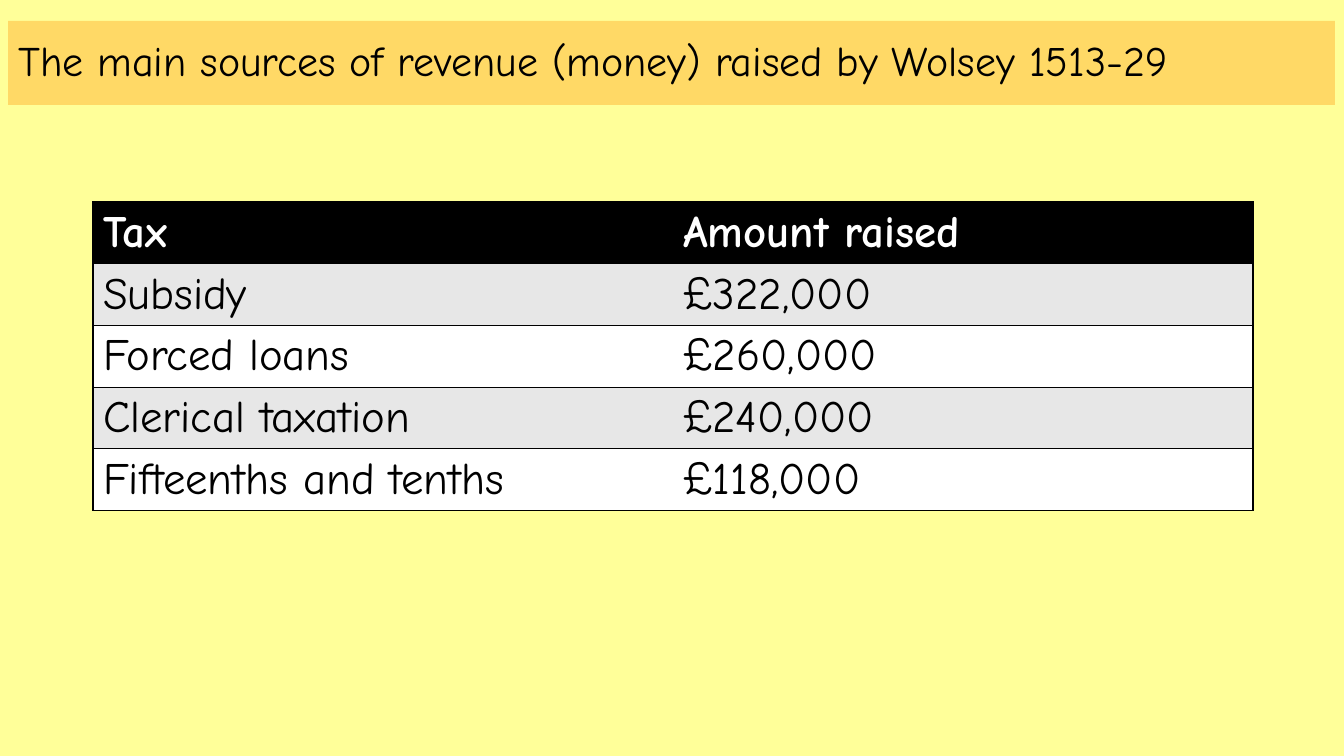
from dataclasses import dataclass

from lxml.etree import SubElement
from pptx import Presentation
from pptx.dml.color import RGBColor
from pptx.enum.text import MSO_ANCHOR as Anchor, MSO_AUTO_SIZE as AutoSize, PP_ALIGN as Align
from pptx.oxml.ns import qn
from pptx.util import Emu, Pt

HEADING = "The main sources of revenue (money) raised by Wolsey 1513-29"
REVENUE = [
    ("Tax", "Amount raised"),
    ("Subsidy", "£322,000"),
    ("Forced loans", "£260,000"),
    ("Clerical taxation", "£240,000"),
    ("Fifteenths and tenths", "£118,000"),
]
SLIDE_SIZE = (1344, 756)
HEADING_BOX = (8, 21, 1327, 84)
TABLE_AT = (93, 202)
COLUMN_WIDTH, ROW_HEIGHT = 580, 61


@dataclass(frozen=True)
class Theme:
    font: str = "Comic Neue"
    page: str = "FFFF99"
    banner: str = "FFD966"
    ink: str = "000000"
    paper: str = "FFFFFF"
    band: str = "E7E7E7"
    heading_size: int = 30
    table_size: int = 32
    rule: int = 1


THEME = Theme()


def px(length):
    return Emu(round(length * 914400 / 100.8))


def paint(fill, color):
    fill.solid()
    fill.fore_color.rgb = RGBColor.from_string(color)


def style(paragraph, size, color, bold=False):
    font = paragraph.font
    font.name, font.size, font.bold = THEME.font, Pt(size), bold
    font.color.rgb = RGBColor.from_string(color)


def rule_cell(cell, visible):
    properties = cell._tc.get_or_add_tcPr()
    for side in "LRTB":
        line = SubElement(properties, qn(f"a:ln{side}"), w=str(Pt(THEME.rule)))
        if side in visible:
            ink = SubElement(line, qn("a:solidFill"))
            SubElement(ink, qn("a:srgbClr"), val=THEME.ink)
        else:
            SubElement(line, qn("a:noFill"))


def add_heading(slide):
    heading = slide.shapes.title
    heading.left, heading.top, heading.width, heading.height = map(px, HEADING_BOX)
    paint(heading.fill, THEME.banner)
    frame = heading.text_frame
    frame.text = HEADING
    frame.word_wrap = True
    frame.auto_size = AutoSize.NONE
    frame.vertical_anchor = Anchor.MIDDLE
    paragraph = frame.paragraphs[0]
    paragraph.alignment = Align.LEFT
    paragraph.line_spacing = 0.9
    style(paragraph, THEME.heading_size, THEME.ink)


def add_revenue(slide):
    rows, columns = len(REVENUE), len(REVENUE[0])
    size = (columns * COLUMN_WIDTH, rows * ROW_HEIGHT)
    table = slide.shapes.add_table(rows, columns, *map(px, TABLE_AT + size)).table
    for r, entries in enumerate(REVENUE):
        header = r == 0
        background = THEME.ink if header else THEME.band if r % 2 else THEME.paper
        for c, entry in enumerate(entries):
            cell = table.cell(r, c)
            cell.text = entry
            style(cell.text_frame.paragraphs[0], THEME.table_size,
                  THEME.paper if header else THEME.ink, header)
            outer = ("L" if c == 0 else "") + ("R" if c == columns - 1 else "")
            rule_cell(cell, "TB" + outer)
            paint(cell.fill, background)


def main():
    deck = Presentation()
    deck.slide_width, deck.slide_height = map(px, SLIDE_SIZE)
    slide = deck.slides.add_slide(deck.slide_layouts[5])
    paint(slide.background.fill, THEME.page)
    add_heading(slide)
    add_revenue(slide)
    deck.save("out.pptx")


if __name__ == "__main__":
    main()
